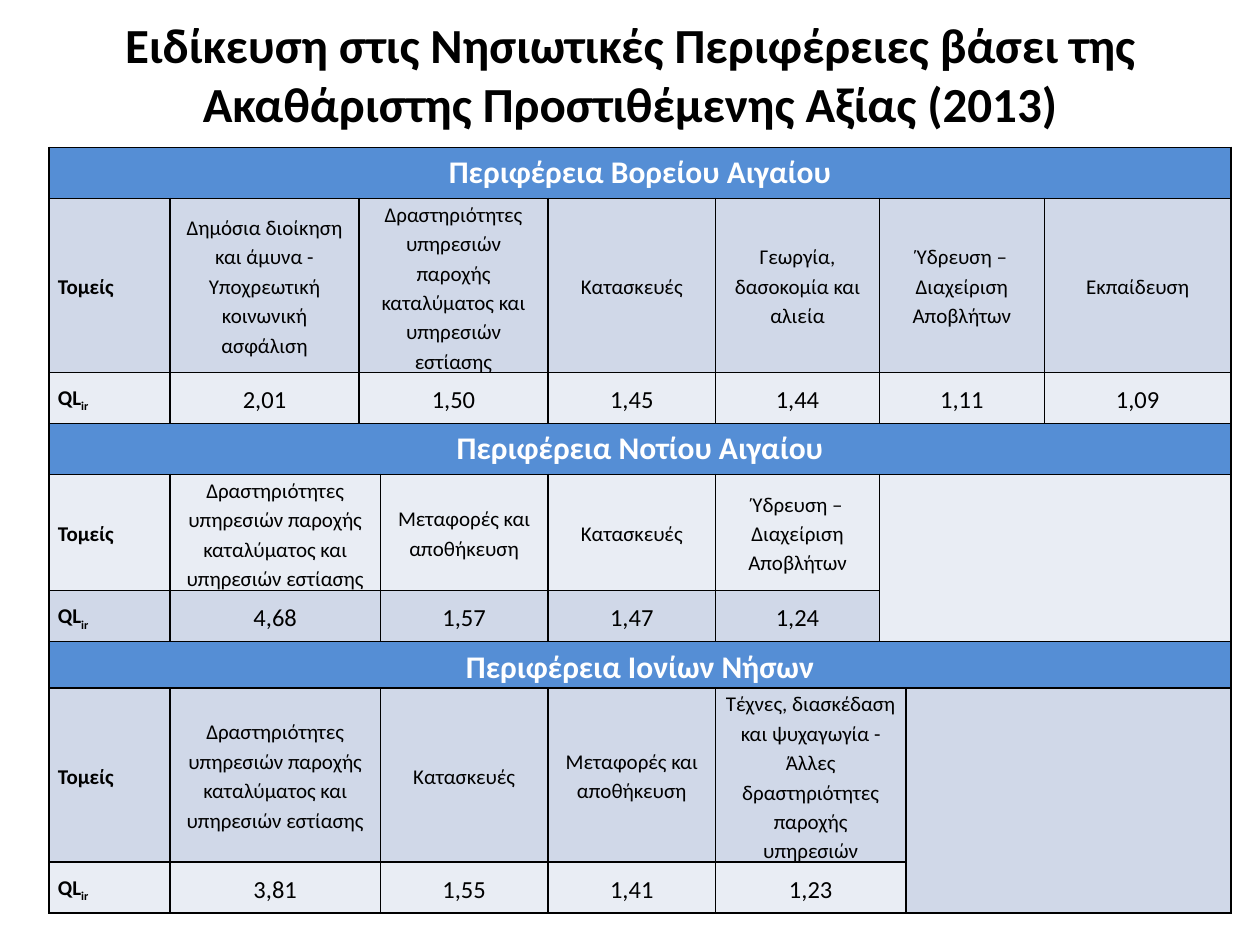
from dataclasses import dataclass
from lxml.etree import SubElement
from pptx import Presentation
from pptx.dml.color import RGBColor as RGB
from pptx.enum.text import MSO_ANCHOR as Anchor, PP_ALIGN as Align
from pptx.oxml.ns import qn
from pptx.util import Pt


@dataclass(frozen=True)
class Theme:
    font: str = "Calibri"
    ink: str = "000000"
    white: str = "FFFFFF"
    band: str = "558ED5"
    dark: str = "D0D8E8"
    light: str = "E9EDF4"
    title: int = 28
    heading: int = 18
    value: int = 14
    label: int = 12


class SlideBuilder:
    def __init__(self, slide, theme):
        self.slide, self.theme = slide, theme

    def style(self, paragraph, size, color, bold, align=Align.CENTER):
        paragraph.alignment = align
        font = paragraph.font
        font.name, font.size, font.bold = self.theme.font, Pt(size), bold
        font.color.rgb = RGB.from_string(color)

    def title(self, text, left, top, width, height):
        frame = self.slide.shapes.add_textbox(Pt(left), Pt(top), Pt(width), Pt(height)).text_frame
        frame.word_wrap, frame.vertical_anchor = True, Anchor.MIDDLE
        frame.text = text
        self.style(frame.paragraphs[0], self.theme.title, self.theme.ink, True)

    def table(self, left, top, height, widths, heights):
        holder = self.slide.shapes.add_table(
            len(heights), len(widths), Pt(left), Pt(top), Pt(sum(widths)), Pt(height))
        table = holder.table
        table.first_row = table.horz_banding = False
        for column, width in zip(table.columns, widths):
            column.width = Pt(width)
        for row, row_height in zip(table.rows, heights):
            row.height = Pt(row_height)
        holder.height = Pt(height)
        for cell in table.iter_cells():
            self.border(cell)
        return table

    def border(self, cell):
        properties = cell._tc.get_or_add_tcPr()
        for side in ("lnL", "lnR", "lnT", "lnB"):
            line = SubElement(properties, qn(f"a:{side}"), w=str(Pt(1)))
            SubElement(SubElement(line, qn("a:solidFill")), qn("a:srgbClr"), val=self.theme.ink)

    def block(self, table, row, column, fill, columns=1, rows=1):
        cell = table.cell(row, column)
        last = table.cell(row + rows - 1, column + columns - 1)
        if columns * rows > 1:
            cell.merge(last)
        for r in range(row, row + rows):
            for c in range(column, column + columns):
                area = table.cell(r, c).fill
                area.solid()
                area.fore_color.rgb = RGB.from_string(fill)
        return cell

    def label(self, cell, text, size, color, bold=False, align=Align.CENTER, subscript="", compact=True):
        paragraph = cell.text_frame.paragraphs[0]
        paragraph.add_run().text = text
        self.style(paragraph, size, color, bold, align)
        if subscript:
            run = paragraph.add_run()
            run.text = subscript
            run.font._element.set("baseline", "-25000")
        if compact:
            paragraph.line_spacing = 1.15
            cell.vertical_anchor = Anchor.MIDDLE
            cell.margin_left = cell.margin_right = Pt(5)
            cell.margin_top = cell.margin_bottom = 0

    def region(self, table, row, name, sectors, fills, compact):
        theme, total = self.theme, len(table.columns)
        heading = self.block(table, row, 0, theme.band, total)
        self.label(heading, name, theme.heading, theme.white, True, compact=compact)
        captions = (("Τομείς", ""), ("QL", "ir"))
        for offset, ((caption, subscript), fill) in enumerate(zip(captions, fills)):
            line, column = row + 1 + offset, 1
            self.label(self.block(table, line, 0, fill), caption, theme.label, theme.ink,
                       True, Align.LEFT, subscript)
            size = (theme.label, theme.value)[offset]
            for *texts, span in sectors:
                cell = self.block(table, line, column, fill, span)
                self.label(cell, texts[offset], size, theme.ink)
                column += span
        if column < total:
            self.block(table, row + 1, column, fills[0], total - column, 2)


def main():
    """Build the slide on regional specialisation of the Greek islands."""
    theme = Theme()
    deck = Presentation()
    deck.slide_width, deck.slide_height = Pt(720), Pt(540)
    builder = SlideBuilder(deck.slides.add_slide(deck.slide_layouts[6]), theme)
    builder.title("Ειδίκευση στις Νησιωτικές Περιφέρειες βάσει της "
                  "Ακαθάριστης Προστιθέμενης Αξίας (2013)", 36, 0, 648, 84.2)

    lodging = "Δραστηριότητες υπηρεσιών παροχής καταλύματος και υπηρεσιών εστίασης"
    building, transport = "Κατασκευές", "Μεταφορές και αποθήκευση"
    water = "Ύδρευση – Διαχείριση Αποβλήτων"
    dark_first, light_first = (theme.dark, theme.light), (theme.light, theme.dark)
    regions = (
        ("Περιφέρεια Βορείου Αιγαίου", (
            ("Δημόσια διοίκηση και άμυνα - Υποχρεωτική κοινωνική ασφάλιση", "2,01", 1),
            (lodging, "1,50", 2), (building, "1,45", 1),
            ("Γεωργία, δασοκομία και αλιεία", "1,44", 1),
            (water, "1,11", 2), ("Εκπαίδευση", "1,09", 1)), dark_first, False),
        ("Περιφέρεια Νοτίου Αιγαίου", (
            (lodging, "4,68", 2), (transport, "1,57", 1),
            (building, "1,47", 1), (water, "1,24", 1)), light_first, False),
        ("Περιφέρεια Ιονίων Νήσων", (
            (lodging, "3,81", 2), (building, "1,55", 1), (transport, "1,41", 1),
            ("Τέχνες, διασκέδαση και ψυχαγωγία - Άλλες δραστηριότητες παροχής υπηρεσιών",
             "1,23", 2)), dark_first, True),
    )
    widths = (69.1, 108, 12.2, 95.8, 95.8, 93.6, 15.1, 79.2, 106.6)
    heights = [29.2] * 6 + [26.6] + [29.2] * 2
    table = builder.table(28.1, 84.2, 437.8, widths, heights)
    for index, region in enumerate(regions):
        builder.region(table, 3 * index, *region)
    deck.save("out.pptx")


if __name__ == "__main__":
    main()
